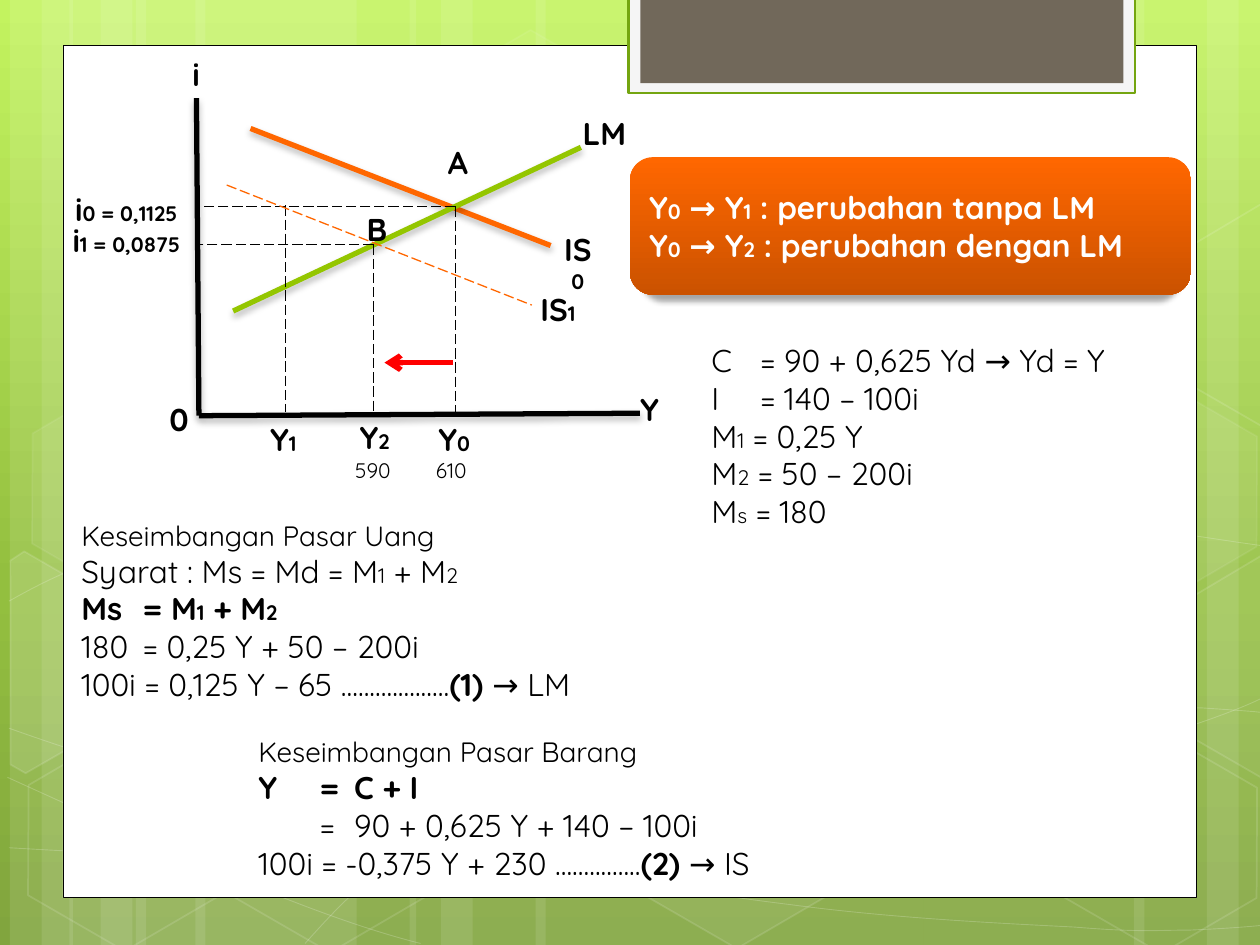
"""Build the IS-LM equilibrium slide."""
from dataclasses import dataclass

from lxml.etree import SubElement
from pptx import Presentation
from pptx.dml.color import RGBColor
from pptx.enum.dml import MSO_LINE
from pptx.enum.shapes import MSO_CONNECTOR, MSO_SHAPE
from pptx.enum.text import MSO_ANCHOR, PP_ALIGN
from pptx.oxml.ns import qn
from pptx.util import Cm, Pt


@dataclass(frozen=True)
class Theme:
    font: str = "Quicksand"
    body: int = 18
    heading: int = 16
    small: int = 12
    ink: str = "000000"
    paper: str = "FFFFFF"
    frame: str = "F5F5F5"
    frame_edge: str = "74A510"
    tab: str = "71685A"
    orange: str = "FF6700"
    green: str = "94C600"
    arrow: str = "FF0000"
    sky: tuple = ((0, "C3F35F"), (62, "93BF3F"), (100, "81A53E"))
    callout: tuple = ((0, "FF6700"), (100, "CB5200"))


THEME = Theme()
LINE_SHADOW = (28, 4, 2, 100)
CALLOUT_SHADOW = (34, 3.5, 4, 96)

BANDS = [(2.74, 4.45), (0.2, 1.27), (0.84, 2.11), (3.94, 4.45), (1.4, 1.27), (2.03, 2.11),
         (18.62, 4.45), (24.33, 1.27), (22.86, 2.11), (10.8, 7.82), (8.26, 1.27), (8.89, 2.11)]
CURVES = [
    [(0.18, 17.09), (1.55, 17.17), (2.92, 17.25), (4.83, 17.22), (6.73, 17.2), (9.09, 17.15),
     (11.63, 16.89), (14.17, 16.64), (17.78, 16.18), (20.12, 15.67), (22.43, 15.19),
     (24.82, 14.43), (25.58, 14)],
    [(0.18, 12.12), (0.91, 11.71), (1.65, 11.33), (3.07, 10.95), (4.52, 10.57), (6.58, 10.06),
     (8.81, 9.83), (11.07, 9.65), (13.82, 9.63), (16.61, 9.83), (19.41, 10.03),
     (24.05, 10.82), (25.58, 11.02)],
    [(0.15, 15.67), (3.23, 17.07), (6.27, 18.47), (8.48, 19.02)],
    [(0.18, 14.68), (0.97, 14.96), (1.78, 15.24), (3.25, 15.65), (4.72, 16.03), (6.93, 16.66),
     (9.07, 17.09), (11.18, 17.53), (13.84, 17.98), (15.95, 18.24), (18.06, 18.52),
     (20.32, 18.62), (21.67, 18.69), (22.99, 18.8), (23.34, 18.75), (24, 18.75),
     (24.66, 18.72), (25.12, 18.69), (25.58, 18.64)],
    [(6.15, 19.02), (6.6, 18.52), (7.06, 18.01), (7.67, 17.55), (8.28, 17.09), (9.14, 16.59),
     (9.86, 16.23), (10.57, 15.88), (11, 15.72), (11.94, 15.47), (12.85, 15.21),
     (14.55, 14.86), (15.44, 14.68), (16.36, 14.5), (16.48, 14.5), (17.27, 14.45),
     (18.06, 14.38), (19.3, 14.3), (20.17, 14.27), (21.06, 14.25), (22.5, 14.27),
     (22.5, 14.27), (22.5, 14.27), (24.21, 14.27), (24.21, 14.27), (24.66, 14.3),
     (25.1, 14.33), (25.32, 14.35), (25.55, 14.38), (25.48, 14.35), (25.55, 14.38)],
]
HEXAGONS = [(8.48, 0.91, 4, 8), (12.62, 14.96, 6, 12), (0.28, 15.01, 0, 12), (0.36, 7.92, 7, 8),
            (4.42, 15.04, 0, 12), (19.13, 11.51, 10, 12), (21.18, 15.06, 0, 12),
            (21.18, 7.98, 7, 8)]
LEFT_CUT = [(0, 0.3), (0.15, 0), (2.41, 0), (3.51, 1.96), (2.41, 3.86), (2.06, 3.86)]
RIGHT_CUT = [(0, 1.91), (1.07, 0), (1.32, 0), (3.45, 3.68), (3.33, 3.86), (1.12, 3.86)]
CUT_HEXAGONS = [(LEFT_CUT, -0.84, 11.66, 10), (RIGHT_CUT, 23.29, 11.28, 4),
                (RIGHT_CUT, 23.29, 4.19, 0)]
SOLID_LINES = [(3.96, 1.98, 4.01, 8.38, THEME.ink), (4.01, 8.38, 12.9, 8.33, THEME.ink),
               (5.05, 2.59, 11.1, 4.95, THEME.orange), (4.7, 6.27, 11.71, 2.97, THEME.green)]
DASHED_LINES = [(5.76, 4.14, 5.76, 8.31, THEME.ink), (9.18, 4.16, 9.18, 8.38, THEME.ink),
                (9.18, 4.16, 4.01, 4.16, THEME.ink), (4.57, 3.73, 10.72, 6.15, THEME.orange),
                (7.53, 4.93, 7.53, 8.31, THEME.ink), (7.53, 4.93, 3.96, 4.93, THEME.ink)]
LABELS = [("A", 8.74, 2.75, 0.99), ("LM", 11.31, 2.18, 1.75), ("IS|0|", 11, 4.52, 1.3),
          ("Y", 12.5, 7.74, 1.19), ("0", 2.85, 7.94, 1.52), ("Y|1|", 4.68, 8.34, 2.06),
          ("Y|0|", 8.15, 8.34, 2.01), ("Y|2|", 6.55, 8.31, 2.01),
          ("i|1 = 0,0875|", 1.1, 4.34, 2.9), ("i|0 = 0,1125|", 1.1, 3.71, 2.9),
          ("i", 3.37, 0.99, 1.17), ("B", 7.14, 4.11, 0.89), ("IS|1|", 10.59, 5.72, 1.32)]
MODEL = ["C\t= 90 + 0,625 Yd → Yd = Y", "I\t= 140 – 100i", "M|1| = 0,25 Y",
         "M|2| = 50 – 200i", "M|s| = 180"]
MONEY_MARKET = ["Keseimbangan Pasar Uang", "Syarat : Ms = Md = M|1| + M|2|",
                "*Ms\t= M|1| + M|2|*", "180\t= 0,25 Y + 50 – 200i",
                "100i = 0,125 Y – 65 ...................*(1) *→ LM"]
GOODS_MARKET = ["Keseimbangan Pasar Barang", "*Y\t=\tC + I*", "\t=\t90 + 0,625 Y + 140 – 100i",
                "100i = -0,375 Y + 230 ...............*(2) *→ IS"]
CHANGES = ["Y|0| → Y|1| : perubahan tanpa LM", "Y|0| → Y|2| : perubahan dengan LM"]


def paint_gradient(fill, element, stops):
    """Fill from top to bottom through the given stops."""
    fill.gradient()
    fill.gradient_angle = 270
    stop_list = next(element.iter(qn("a:gsLst")))
    stop_list.clear()
    for percent, color in stops:
        stop = SubElement(stop_list, qn("a:gs"), pos=str(percent * 1000))
        SubElement(stop, qn("a:srgbClr"), val=color)


def set_effects(shape, shadow=None):
    """Replace the theme shadow by none, or by (opacity, blur, distance, width percent)."""
    effects = SubElement(shape.element.find(qn("p:spPr")), qn("a:effectLst"))
    if shadow:
        opacity, blur, distance, width = shadow
        outer = SubElement(effects, qn("a:outerShdw"), blurRad=str(Pt(blur)),
                           dist=str(Pt(distance)), dir="5400000", sx=str(width * 1000),
                           rotWithShape="0")
        color = SubElement(outer, qn("a:srgbClr"), val=THEME.ink)
        SubElement(color, qn("a:alpha"), val=str(opacity * 1000))


def style_shape(shape, fill=None, line=None, width=1, opacities=()):
    """Set fill and outline, with opacities in that order."""
    if fill:
        shape.fill.solid()
        shape.fill.fore_color.rgb = RGBColor.from_string(fill)
    else:
        shape.fill.background()
    if line:
        shape.line.color.rgb = RGBColor.from_string(line)
        shape.line.width = Pt(width)
    else:
        shape.line.fill.background()
    colors = list(shape.element.find(qn("p:spPr")).iter(qn("a:srgbClr")))
    for color, opacity in zip(colors, opacities):
        SubElement(color, qn("a:alpha"), val=str(opacity * 1000))
    set_effects(shape)


def style_glass(shape, fill_opacity, line_opacity, width=1):
    """Give a decoration a faint white fill and outline."""
    opacities = [value for value in (fill_opacity, line_opacity) if value]
    style_shape(shape, THEME.paper if fill_opacity else None,
                THEME.paper if line_opacity else None, width, opacities)


def add_box(slide, kind, *box):
    """Add a preset shape at left, top, width, height."""
    return slide.shapes.add_shape(kind, *map(Cm, box))


def add_outline(slide, points, close):
    """Add a freeform through the points."""
    corners = [(Cm(x), Cm(y)) for x, y in points]
    builder = slide.shapes.build_freeform(*corners[0])
    builder.add_line_segments(corners[1:], close=close)
    return builder.convert_to_shape()


def add_curve(slide, controls):
    """Add a chain of cubic curves through every third control point."""
    curve = add_outline(slide, controls, False)
    outline = next(curve.element.iter(qn("a:path")))
    segments = outline.findall(qn("a:lnTo"))
    for start in range(0, len(segments), 3):
        bend = SubElement(outline, qn("a:cubicBezTo"))
        for segment in segments[start:start + 3]:
            bend.append(segment[0])
            outline.remove(segment)
    return curve


def add_line(slide, ends, color, width=3, dash=None, shadow=None, arrow=False):
    """Add a straight line, dashed or with an arrowhead on request."""
    connector = slide.shapes.add_connector(MSO_CONNECTOR.STRAIGHT, *map(Cm, ends))
    connector.line.color.rgb = RGBColor.from_string(color)
    connector.line.width = Pt(width)
    if dash:
        connector.line.dash_style = dash
    if arrow:
        SubElement(next(connector.element.iter(qn("a:ln"))), qn("a:tailEnd"), type="arrow")
    set_effects(connector, shadow)


def write_lines(frame, lines, size=THEME.body, first_size=None, color=THEME.ink, bold=False,
                align=PP_ALIGN.LEFT, tabs=()):
    """Write paragraphs where |...| is small and *...* is bold."""
    frame.word_wrap = True
    for index, line in enumerate(lines):
        para = frame.add_paragraph() if index else frame.paragraphs[0]
        para.alignment = align
        para.font.name = THEME.font
        para.font.size = Pt(first_size if first_size and not index else size)
        para.font.bold = bold
        para.font.color.rgb = RGBColor.from_string(color)
        if "\t" in line:
            tab_list = SubElement(para.font._element.getparent(), qn("a:tabLst"))
            para.font._element.addprevious(tab_list)
            for position in tabs:
                SubElement(tab_list, qn("a:tab"), pos=str(Cm(position)), algn="l")
        for strong, chunk in enumerate(line.split("*")):
            for small, piece in enumerate(chunk.split("|")):
                if piece:
                    span = para.add_run()
                    span.text = piece
                    if strong % 2:
                        span.font.bold = True
                    if small % 2:
                        span.font.size = Pt(THEME.small)


def add_text(slide, box, lines, **style):
    """Add a text box at left, top, width, height."""
    write_lines(slide.shapes.add_textbox(*map(Cm, box)).text_frame, lines, **style)


def add_backdrop(slide):
    """Draw the green background, its decorations and the white page."""
    paint_gradient(slide.background.fill, slide.element, THEME.sky)
    for left, width in BANDS:
        style_glass(add_box(slide, MSO_SHAPE.RECTANGLE, left, 0, width, 19.05), 10, 0)
    for controls in CURVES:
        style_glass(add_curve(slide, controls), 0, 20, 0.5)
    for left, top, fill_opacity, line_opacity in HEXAGONS:
        hexagon = add_box(slide, MSO_SHAPE.HEXAGON, left, top, 4.45, 3.86)
        hexagon.rotation = 30
        hexagon.adjustments[0] = 0.285
        style_glass(hexagon, fill_opacity, line_opacity)
    for corners, left, top, fill_opacity in CUT_HEXAGONS:
        hexagon = add_outline(slide, [(left + x, top + y) for x, y in corners], True)
        hexagon.rotation = 30
        style_glass(hexagon, fill_opacity, 12)
    style_shape(add_box(slide, MSO_SHAPE.RECTANGLE, 1.27, 0.91, 22.86, 17.19),
                THEME.paper, THEME.ink, 0.5)
    style_shape(add_box(slide, MSO_SHAPE.RECTANGLE, 12.67, -0.05, 10.21, 1.93),
                THEME.frame, THEME.frame_edge, 1.25)
    style_shape(add_box(slide, MSO_SHAPE.RECTANGLE, 12.91, -0.05, 9.74, 1.73), THEME.tab)


def add_diagram(slide):
    """Draw the IS-LM diagram with its labels."""
    for *ends, color in SOLID_LINES:
        add_line(slide, ends, color, shadow=LINE_SHADOW)
    for *ends, color in DASHED_LINES:
        add_line(slide, ends, color, 0.75, MSO_LINE.LONG_DASH)
    add_line(slide, (9.13, 7.31, 7.75, 7.31), THEME.arrow, arrow=True)
    for label, left, top, width in LABELS:
        add_text(slide, (left, top, width, 1.02), [label], bold=True, align=PP_ALIGN.CENTER)
    for value, left in (("590", 6.91), ("610", 8.54)):
        add_text(slide, (left, 9.09, 1.22, 0.76), [value], size=THEME.small)


def add_callout(slide):
    """Add the orange box that explains the changes in Y."""
    callout = add_box(slide, MSO_SHAPE.ROUNDED_RECTANGLE, 12.7, 3.17, 11.31, 2.77)
    paint_gradient(callout.fill, callout.element, THEME.callout)
    callout.line.fill.background()
    set_effects(callout, CALLOUT_SHADOW)
    callout.text_frame.vertical_anchor = MSO_ANCHOR.MIDDLE
    write_lines(callout.text_frame, CHANGES, color=THEME.paper, bold=True)


def main():
    """Build and save the deck."""
    deck = Presentation()
    deck.slide_width, deck.slide_height = Cm(25.4), Cm(19.05)
    page = deck.slides.add_slide(deck.slide_layouts[6])
    add_backdrop(page)
    add_diagram(page)
    add_text(page, (14.09, 6.75, 9.32, 4.11), MODEL, tabs=(0.99,))
    add_callout(page)
    for box, lines in (((1.39, 10.32, 14.48, 4.11), MONEY_MARKET),
                       ((4.96, 14.68, 13.28, 3.33), GOODS_MARKET)):
        add_text(page, box, lines, first_size=THEME.heading, tabs=(1.24, 1.93))
    deck.save("out.pptx")


if __name__ == "__main__":
    main()
